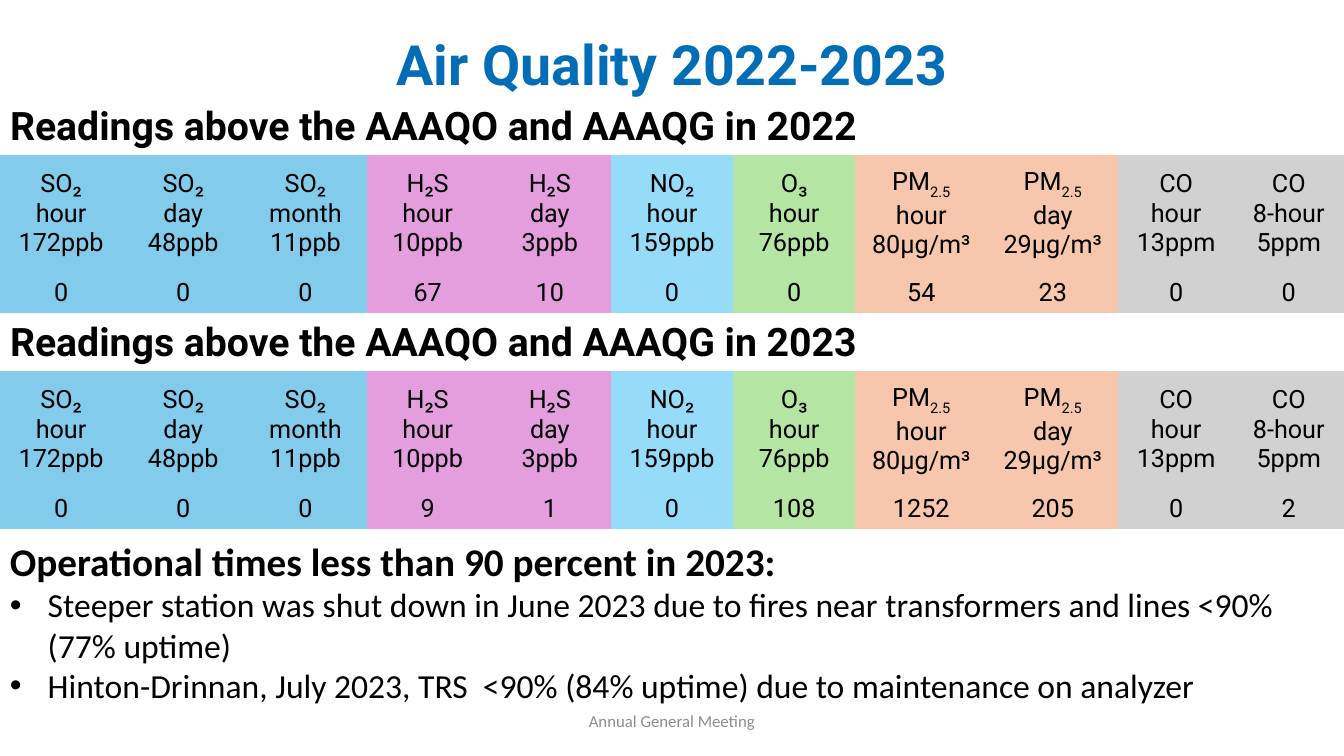
from lxml.etree import SubElement
from pptx import Presentation
from pptx.dml.color import RGBColor
from pptx.enum.text import MSO_ANCHOR as Anchor, MSO_AUTO_SIZE as AutoSize, PP_ALIGN as Align
from pptx.oxml.ns import qn
from pptx.util import Pt

BLACK = RGBColor(0x00, 0x00, 0x00)
TITLE_BLUE = RGBColor(0x00, 0x6D, 0xB6)
FOOTER_GREY = RGBColor(0x8C, 0x8C, 0x8C)
SULPHUR_BLUE = RGBColor(0x83, 0xCB, 0xEB)
SULPHIDE_PINK = RGBColor(0xE5, 0x9E, 0xDD)
NITROGEN_BLUE = RGBColor(0x96, 0xDC, 0xF8)
OZONE_GREEN = RGBColor(0xB4, 0xE5, 0xA2)
PARTICLE_ORANGE = RGBColor(0xF6, 0xC6, 0xAD)
CARBON_GREY = RGBColor(0xD1, 0xD1, 0xD1)

WIDTH, HEIGHT = 960, 540
COLUMN_WIDTHS = [87.3] * 7 + [94.3, 93.6, 82.6, 78.4]
ROW_HEIGHTS = [40, 84.2, 28.8]
NO_STYLE_NO_GRID = "{2D5ABB26-0587-4C30-8999-92F81FD0307C}"
SUBSCRIPT = "2.5"

LIMITS = [
    ("SO₂", "hour", "172ppb", SULPHUR_BLUE),
    ("SO₂", "day", "48ppb", SULPHUR_BLUE),
    ("SO₂", "month", "11ppb", SULPHUR_BLUE),
    ("H₂S", "hour", "10ppb", SULPHIDE_PINK),
    ("H₂S", "day", "3ppb", SULPHIDE_PINK),
    ("NO₂", "hour", "159ppb", NITROGEN_BLUE),
    ("O₃", "hour", "76ppb", OZONE_GREEN),
    ("PM2.5", "hour", "80µg/m³", PARTICLE_ORANGE),
    ("PM2.5", "day", "29µg/m³", PARTICLE_ORANGE),
    ("CO", "hour", "13ppm", CARBON_GREY),
    ("CO", "8-hour", "5ppm", CARBON_GREY),
]
READINGS = [
    (2022, 70.6, [0, 0, 0, 67, 10, 0, 0, 54, 23, 0, 0]),
    (2023, 224.9, [0, 0, 0, 9, 1, 0, 108, 1252, 205, 0, 2]),
]
OUTAGES = [
    "Steeper station was shut down in June 2023 due to fires near transformers and lines <90% (77% uptime)",
    "Hinton-Drinnan, July 2023, TRS  <90% (84% uptime) due to maintenance on analyzer",
]


class AirQualitySlide:
    """Hold the fonts and the current slide, and add each kind of element."""

    def __init__(self, presentation):
        self.heading_font = "Roboto"
        self.body_font = "Calibri"
        self.slide = presentation.slides.add_slide(presentation.slide_layouts[5])

    def format_runs(self, paragraph, font, size, color=BLACK, bold=False):
        for run in paragraph.runs:
            run.font.name = font
            run.font.size = Pt(size)
            run.font.bold = bold
            run.font.color.rgb = color

    def place_title(self, text, left, top, width, height):
        title = self.slide.shapes.title
        title.left, title.top, title.width, title.height = map(Pt, (left, top, width, height))
        title.text_frame.text = text
        title.text_frame.vertical_anchor = Anchor.MIDDLE
        title.text_frame.auto_size = AutoSize.NONE
        paragraph = title.text_frame.paragraphs[0]
        paragraph.alignment = Align.CENTER
        paragraph.line_spacing = 0.9
        self.format_runs(paragraph, self.heading_font, 39.6, TITLE_BLUE, True)

    def add_text(self, text, left, top, width, height):
        box = self.slide.shapes.add_textbox(*map(Pt, (left, top, width, height)))
        box.text_frame.word_wrap = True
        box.text_frame.text = text
        return box.text_frame

    def add_footer(self, text, left, top, width, height):
        text_frame = self.add_text(text, left, top, width, height)
        text_frame.vertical_anchor = Anchor.MIDDLE
        paragraph = text_frame.paragraphs[0]
        paragraph.alignment = Align.CENTER
        self.format_runs(paragraph, self.body_font, 12, FOOTER_GREY)

    def add_bullets(self, heading, items, left, top, width, height):
        text_frame = self.add_text(heading, left, top, width, height)
        self.format_runs(text_frame.paragraphs[0], self.body_font, 28, bold=True)
        for item in items:
            paragraph = text_frame.add_paragraph()
            paragraph.text = item
            properties = paragraph._p.get_or_add_pPr()
            properties.set("marL", str(Pt(27)))
            properties.set("indent", str(-Pt(27)))
            SubElement(properties, qn("a:buFont"), typeface="Arial")
            SubElement(properties, qn("a:buChar"), char="•")
            self.format_runs(paragraph, self.body_font, 24)

    def fill_cell(self, cell, lines, color):
        cell.fill.solid()
        cell.fill.fore_color.rgb = color
        cell.vertical_anchor = Anchor.MIDDLE
        paragraph = cell.text_frame.paragraphs[0]
        paragraph.alignment = Align.CENTER
        for index, line in enumerate(lines):
            if index:
                paragraph.add_line_break()
            base, subscript, _ = line.partition(SUBSCRIPT)
            paragraph.add_run().text = base
            if subscript:
                run = paragraph.add_run()
                run.text = subscript
                run.font._element.set("baseline", "-25000")
        self.format_runs(paragraph, self.heading_font, 18)

    def add_readings(self, year, top, counts):
        frame = self.slide.shapes.add_table(
            len(ROW_HEIGHTS), len(LIMITS), Pt(0), Pt(top), Pt(WIDTH), Pt(sum(ROW_HEIGHTS)))
        table = frame.table
        table.first_row = table.horz_banding = False
        table._tbl.tblPr.find(qn("a:tableStyleId")).text = NO_STYLE_NO_GRID
        for column, width in zip(table.columns, COLUMN_WIDTHS):
            column.width = Pt(width)
        for row, height in zip(table.rows, ROW_HEIGHTS):
            row.height = Pt(height)
        heading = table.cell(0, 0)
        heading.merge(table.cell(0, len(LIMITS) - 1))
        heading.fill.background()
        heading.vertical_anchor = Anchor.MIDDLE
        heading.text_frame.text = f"Readings above the AAAQO and AAAQG in {year}"
        self.format_runs(heading.text_frame.paragraphs[0], self.heading_font, 28, bold=True)
        for index, ((*label, color), count) in enumerate(zip(LIMITS, counts)):
            self.fill_cell(table.cell(1, index), label, color)
            self.fill_cell(table.cell(2, index), [str(count)], color)


def main():
    presentation = Presentation()
    presentation.slide_width, presentation.slide_height = Pt(WIDTH), Pt(HEIGHT)
    page = AirQualitySlide(presentation)
    page.place_title("Air Quality 2022-2023", 66, 21.6, 828, 52.6)
    for year, top, counts in READINGS:
        page.add_readings(year, top, counts)
    page.add_footer("Annual General Meeting", 318, 500.5, 324, 28.8)
    page.add_bullets("Operational times less than 90 percent in 2023:", OUTAGES, 0, 380.2, WIDTH, 128.2)
    presentation.save("out.pptx")


if __name__ == "__main__":
    main()
